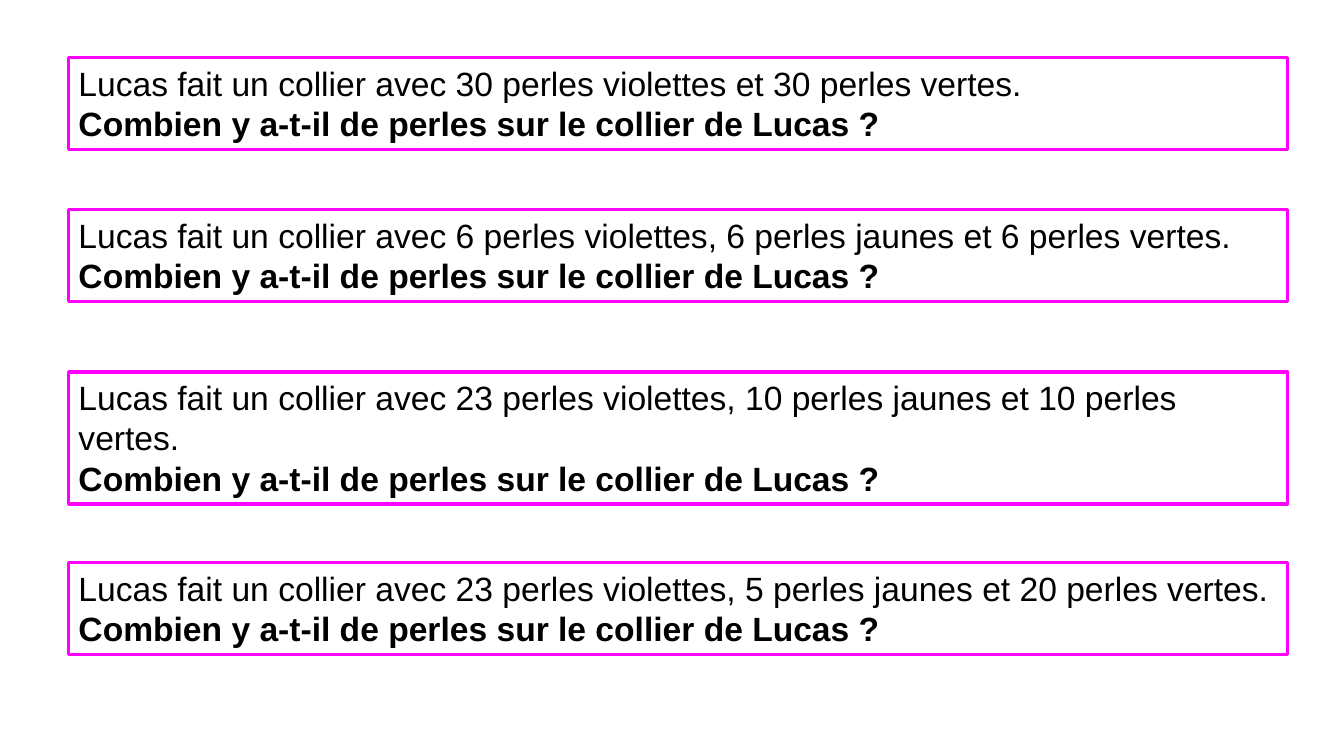
from dataclasses import dataclass

from pptx import Presentation
from pptx.dml.color import RGBColor
from pptx.enum.text import MSO_AUTO_SIZE
from pptx.util import Inches, Pt


@dataclass(frozen=True)
class Theme:
    font: str = "Arial"
    size: Pt = Pt(24)
    text: RGBColor = RGBColor(0, 0, 0)
    border: RGBColor = RGBColor(255, 0, 255)
    border_width: Pt = Pt(2.25)


theme = Theme()
question = "Combien y a-t-il de perles sur le collier de Lucas ?"
problems = [
    (0.57, 0.91, "30 perles violettes et 30 perles vertes"),
    (2.08, 0.91, "6 perles violettes, 6 perles jaunes et 6 perles vertes"),
    (3.69, 1.31, "23 perles violettes, 10 perles jaunes et 10 perles vertes"),
    (5.58, 0.91, "23 perles violettes, 5 perles jaunes et 20 perles vertes"),
]

deck = Presentation()
deck.slide_width = Inches(13.33)
deck.slide_height = Inches(7.5)
page = deck.slides.add_slide(deck.slide_layouts[6])

for top, height, beads in problems:
    box = page.shapes.add_textbox(Inches(0.68), Inches(top), Inches(12.09), Inches(height))
    box.line.color.rgb = theme.border
    box.line.width = theme.border_width
    frame = box.text_frame
    frame.text = f"Lucas fait un collier avec {beads}.\n{question}"
    frame.word_wrap = True
    frame.auto_size = MSO_AUTO_SIZE.SHAPE_TO_FIT_TEXT
    for para in frame.paragraphs:
        for span in para.runs:
            span.font.name = theme.font
            span.font.size = theme.size
            span.font.color.rgb = theme.text
            span.font.bold = span.text == question

deck.save("out.pptx")
